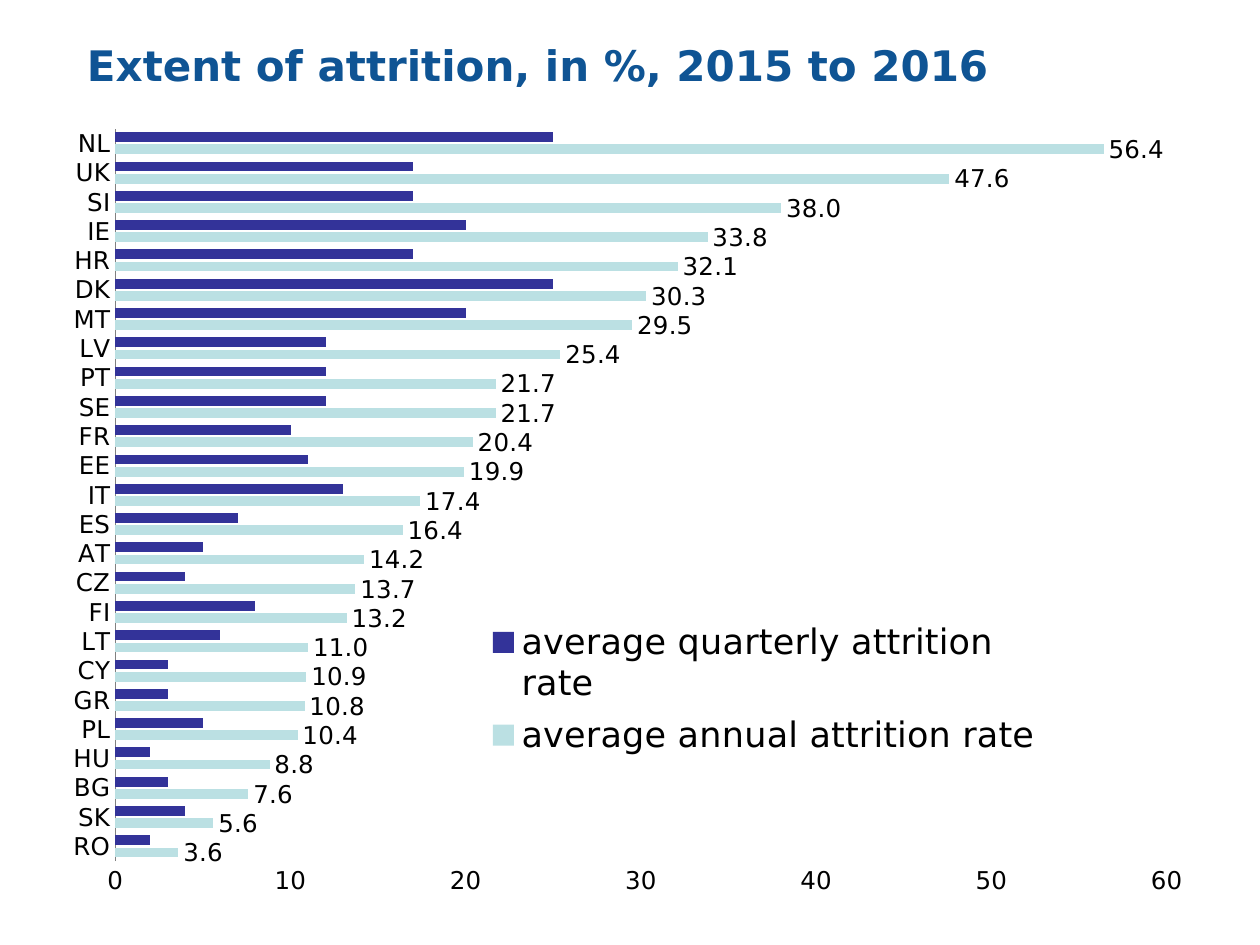
from dataclasses import dataclass

from pptx import Presentation
from pptx.chart.data import CategoryChartData
from pptx.dml.color import RGBColor
from pptx.enum.chart import XL_CHART_TYPE as ChartType
from pptx.enum.chart import XL_LABEL_POSITION as LabelPosition
from pptx.enum.chart import XL_LEGEND_POSITION as LegendPosition
from pptx.enum.chart import XL_TICK_MARK as TickMark
from pptx.enum.text import MSO_ANCHOR, PP_ALIGN
from pptx.oxml import parse_xml
from pptx.oxml.ns import nsdecls, qn
from pptx.util import Inches, Pt


@dataclass(frozen=True)
class Theme:
    font: str = "DejaVu Sans"
    title_color: str = "0F5494"
    text_color: str = "000000"
    axis_color: str = "808080"
    annual_color: str = "BBE0E3"
    quarterly_color: str = "333399"
    title_size: int = 24
    legend_size: int = 20
    label_size: int = 14


THEME = Theme()
PAGE_WIDTH, PAGE_HEIGHT = Inches(10), Inches(7.5)

# Boxes: left, top, width, height as shares of the slide
TITLE_BOX = (0.059, 0, 0.921, 0.136)
CHART_BOX = (0.043, 0.132, 0.916, 0.829)
# Boxes: left, top, width, height as shares of the chart
PLOT_BOX = (0.053, 0.005, 0.911, 0.935)
LEGEND_BOX = (0.365, 0.62, 0.5, 0.2)

# Country: annual rate, quarterly rate
RATES = {
    "RO": (3.6, 2), "SK": (5.6, 4), "BG": (7.6, 3), "HU": (8.8, 2),
    "PL": (10.4, 5), "GR": (10.8, 3), "CY": (10.9, 3), "LT": (11, 6),
    "FI": (13.2, 8), "CZ": (13.7, 4), "AT": (14.2, 5), "ES": (16.4, 7),
    "IT": (17.4, 13), "EE": (19.9, 11), "FR": (20.4, 10), "SE": (21.7, 12),
    "PT": (21.7, 12), "LV": (25.4, 12), "MT": (29.5, 20), "DK": (30.3, 25),
    "HR": (32.1, 17), "IE": (33.8, 20), "SI": (38, 17), "UK": (47.6, 17),
    "NL": (56.4, 25),
}


def slide_lengths(box):
    left, top, width, height = box
    return (int(left * PAGE_WIDTH), int(top * PAGE_HEIGHT),
            int(width * PAGE_WIDTH), int(height * PAGE_HEIGHT))


def format_font(font, size, color=THEME.text_color, bold=False):
    font.name = THEME.font
    font.size = Pt(size)
    font.bold = bold
    font.color.rgb = RGBColor.from_string(color)


def manual_layout(box, inner=False):
    """Return a chart layout element for a box given in shares of the chart."""
    target = '<c:layoutTarget val="inner"/>' if inner else ""
    modes = "".join(f'<c:{side}Mode val="edge"/>' for side in "xy")
    places = "".join(f'<c:{side} val="{share}"/>' for side, share in zip("xywh", box))
    return parse_xml(f'<c:layout {nsdecls("c")}><c:manualLayout>'
                     f'{target}{modes}{places}</c:manualLayout></c:layout>')


def add_title(page, text, box):
    title = page.shapes.title
    title.left, title.top, title.width, title.height = slide_lengths(box)
    frame = title.text_frame
    frame.word_wrap = True
    frame.vertical_anchor = MSO_ANCHOR.MIDDLE
    frame.text = text
    para = frame.paragraphs[0]
    para.alignment = PP_ALIGN.LEFT
    format_font(para.runs[0].font, THEME.title_size, THEME.title_color, bold=True)


def style_axes(chart):
    for axis in (chart.category_axis, chart.value_axis):
        axis.has_major_gridlines = False
        axis.major_tick_mark = axis.minor_tick_mark = TickMark.NONE
        format_font(axis.tick_labels.font, THEME.label_size)
    chart.category_axis.format.line.color.rgb = RGBColor.from_string(THEME.axis_color)
    scale = chart.value_axis
    scale.minimum_scale, scale.maximum_scale, scale.major_unit = 0, 60, 10
    scale.format.line.fill.background()
    scale.tick_labels.number_format = "General"
    scale.tick_labels.number_format_is_linked = False


def style_series(chart):
    plot = chart.plots[0]
    plot.vary_by_categories = False
    plot.gap_width, plot.overlap = 75, -25
    annual, quarterly = plot.series
    for series, color in ((annual, THEME.annual_color),
                          (quarterly, THEME.quarterly_color)):
        series.format.fill.solid()
        series.format.fill.fore_color.rgb = RGBColor.from_string(color)
        series.invert_if_negative = False
    labels = annual.data_labels
    labels.show_value = True
    labels.number_format, labels.number_format_is_linked = "0.0", False
    labels.position = LabelPosition.OUTSIDE_END
    format_font(labels.font, THEME.label_size)


def place_plot_and_legend(chart):
    plot_area = chart.plots[0]._element.getparent()
    for old_layout in plot_area.findall(qn("c:layout")):
        plot_area.remove(old_layout)
    plot_area.insert(0, manual_layout(PLOT_BOX, inner=True))

    chart.has_legend = True
    legend = chart.legend
    legend.position = LegendPosition.BOTTOM
    legend.include_in_layout = False
    format_font(legend.font, THEME.legend_size)
    element = legend._element
    for old_layout in element.findall(qn("c:layout")):
        element.remove(old_layout)
    element.find(qn("c:legendPos")).addnext(manual_layout(LEGEND_BOX))


def add_attrition_chart(page, box):
    data = CategoryChartData()
    data.categories = list(RATES)
    annual, quarterly = zip(*RATES.values())
    data.add_series("average annual attrition rate", annual)
    data.add_series("average quarterly attrition rate", quarterly)
    chart = page.shapes.add_chart(
        ChartType.BAR_CLUSTERED, *slide_lengths(box), data).chart
    chart.has_title = False
    format_font(chart.font, 10)
    style_axes(chart)
    style_series(chart)
    place_plot_and_legend(chart)


def main():
    deck = Presentation()
    deck.slide_width, deck.slide_height = PAGE_WIDTH, PAGE_HEIGHT
    page = deck.slides.add_slide(deck.slide_layouts.get_by_name("Title Only"))
    add_title(page, "Extent of attrition, in %, 2015 to 2016", TITLE_BOX)
    add_attrition_chart(page, CHART_BOX)
    deck.save("out.pptx")


if __name__ == "__main__":
    main()
